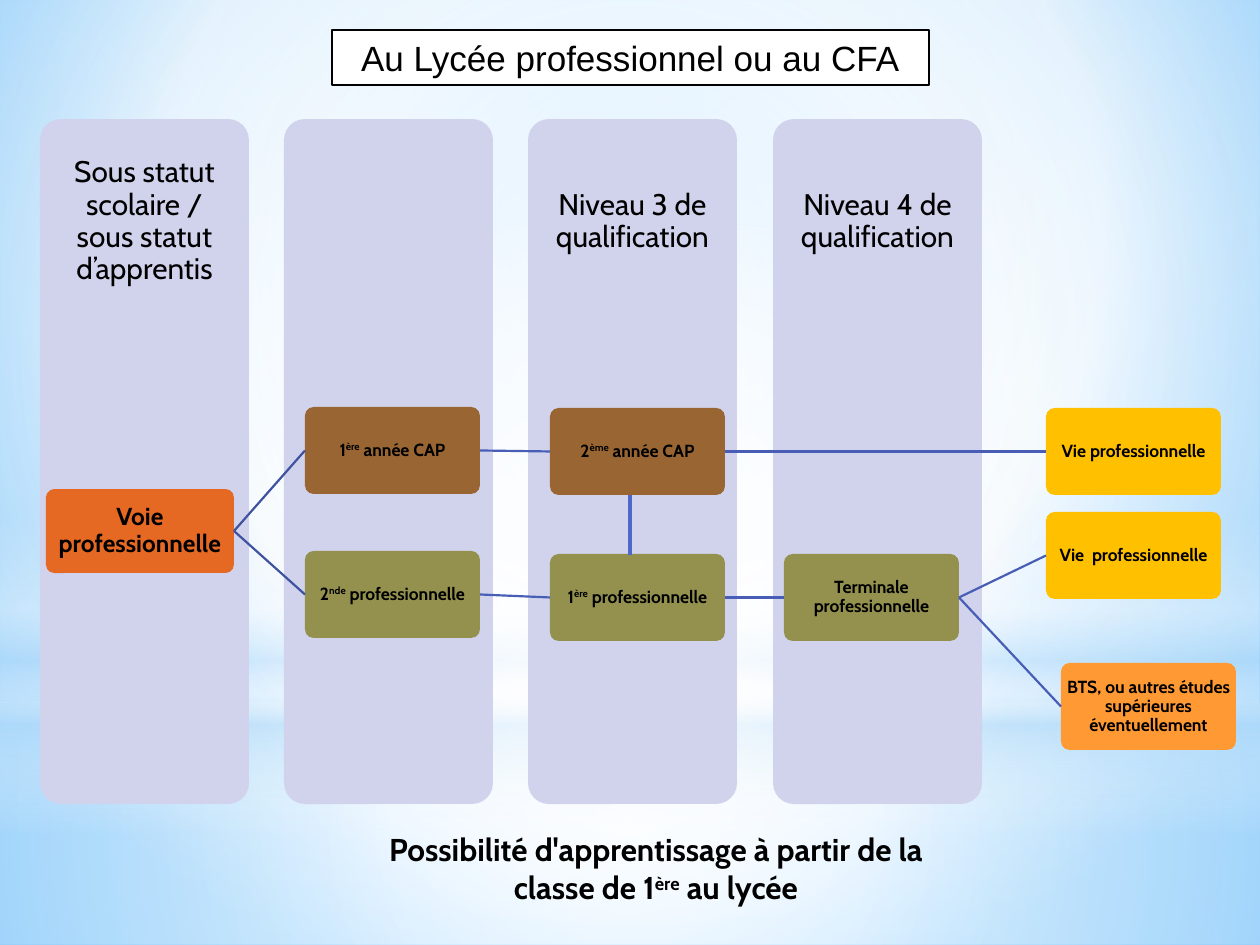
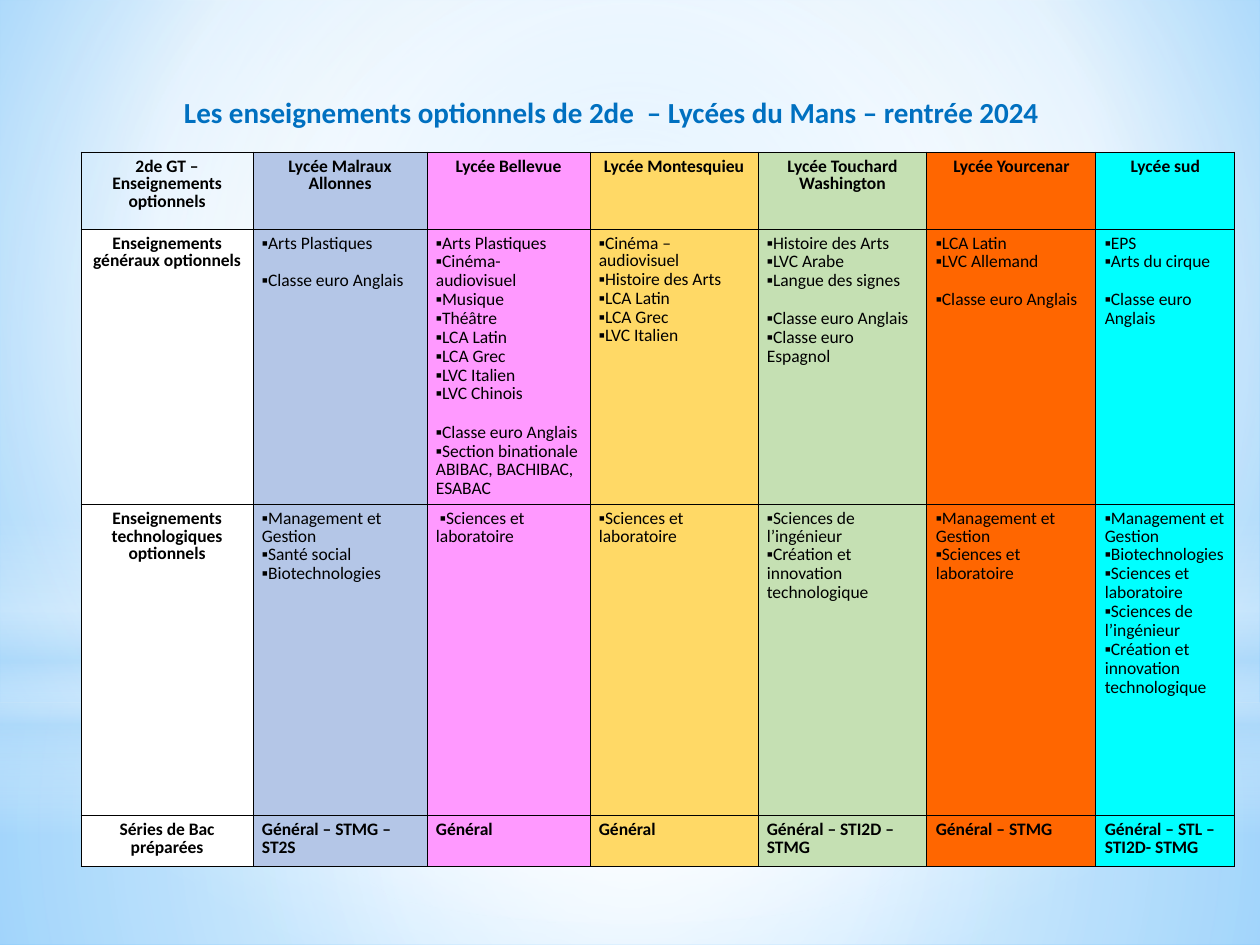
import dataclasses

import lxml.etree
import pptx
import pptx.dml.color
import pptx.enum.shapes
import pptx.enum.text
import pptx.oxml
import pptx.oxml.ns
import pptx.util

PX = 914400 / 126
RGB = pptx.dml.color.RGBColor.from_string
SHAPE = pptx.enum.shapes.MSO_SHAPE
ALIGN = pptx.enum.text.PP_ALIGN
ANCHOR = pptx.enum.text.MSO_ANCHOR
qn = pptx.oxml.ns.qn


@dataclasses.dataclass(frozen=True)
class Theme:
    black: str = "000000"
    white: str = "FFFFFF"
    sky: str = "B4DCFA"
    sky_core: str = "9ED5FF"
    sky_edge: str = "5BB9FF"
    band: str = "D0D3EB"
    start: str = "E56823"
    cap: str = "996633"
    pro: str = "93914D"
    work: str = "FFC000"
    studies: str = "FF9933"
    link_start: str = "3E52A0"
    link: str = "475DB6"
    bridge: str = "4E67C8"
    heading: str = "0070C0"
    schools: tuple = ("B4C6E7", "FF99FF", "FFD966", "C5E0B3", "FF6600", "00FFFF")
    body_font: str = "Cabin"
    title_font: str = "Arial"
    table_font: str = "Calibri"
    title_size: float = 20
    heading_size: float = 16.6
    note_size: float = 18
    band_size: float = 17
    start_size: float = 14
    small_size: float = 10


T = Theme()


def write(tf, text, size=T.small_size, font=T.body_font, color=T.black, bold=False,
          align=ALIGN.CENTER, anchor=None, spacing=(1, 1), margins=None, gap=0):
    tf.word_wrap = True
    if anchor is not None:
        tf.auto_size = pptx.enum.text.MSO_AUTO_SIZE.NONE
        tf.vertical_anchor = anchor
    if margins:
        x, y = (int(m * PX) for m in margins)
        tf.margin_left = tf.margin_right = x
        tf.margin_top = tf.margin_bottom = y
    p, before = tf.paragraphs[0], 0
    for i, line in enumerate(text.split("\n")):
        if not line:
            before = gap
            continue
        if i:
            p = tf.add_paragraph()
        p.alignment = align
        p.line_spacing = spacing[min(i, 1)]
        p.space_before = pptx.util.Pt(before)
        before = 0
        for n, part in enumerate(line.split("^")):
            r = p.add_run()
            r.text = part
            r.font.size = pptx.util.Pt(size)
            r.font.name = font
            r.font.bold = bold
            r.font.color.rgb = RGB(color)
            if n % 2:
                r._r.get_or_add_rPr().set("baseline", "30000")


def gradient(props, stops, focus=None):
    solid = props.find(qn("a:solidFill"))
    grad = pptx.oxml.parse_xml(
        '<a:gradFill xmlns:a="http://schemas.openxmlformats.org/drawingml/2006/main"'
        ' rotWithShape="1"><a:gsLst/></a:gradFill>')
    for pos, color, alpha in stops:
        gs = lxml.etree.SubElement(grad[0], qn("a:gs"), pos=str(pos * 1000))
        clr = lxml.etree.SubElement(gs, qn("a:srgbClr"), val=color)
        lxml.etree.SubElement(clr, qn("a:alpha"), val=str(alpha * 1000))
    if focus:
        kind = lxml.etree.SubElement(grad, qn("a:path"), {"path": "circle"})
        sides = {k: str(v * 1000) for k, v in zip("ltrb", focus)}
        lxml.etree.SubElement(kind, qn("a:fillToRect"), sides)
    else:
        lxml.etree.SubElement(grad, qn("a:lin"), ang="5400000", scaled="0")
    props.replace(solid, grad)


prs = pptx.Presentation()
prs.slide_width = pptx.util.Inches(10)
prs.slide_height = pptx.util.Inches(7.5)
layout = prs.slide_layouts[5]
master = prs.slide_master

s = prs.slides.add_slide(layout)
master.background.fill.solid()
gradient(next(master.element.iter(qn("p:bgPr"))),
         [(0, T.sky_core, 100), (60, T.white, 100), (100, T.sky_edge, 100)],
         (20, 10, 20, 60))

center = (50, 50, 50, 50)
glows = [
    (SHAPE.RECTANGLE, 703, 242, center,
     [(0, T.white, 91), (37, T.white, 76), (100, T.sky, 79)]),
    (SHAPE.RECTANGLE, 0, 703, center,
     [(0, T.white, 89), (48, T.white, 62), (100, T.sky, 79)]),
    (SHAPE.RECTANGLE, 519, 315, None,
     [(0, T.white, 0), (29, T.white, 30), (45, T.sky, 40),
      (55, T.white, 26), (65, T.sky, 60), (100, T.white, 0)]),
    (SHAPE.OVAL, 220, 703, center, [(0, T.white, 100), (56, T.white, 0)]),
]
for i, (kind, top, height, focus, stops) in enumerate(glows):
    sp = s.shapes.add_shape(kind, 0, int(top * PX), prs.slide_width, int(height * PX))
    sp.shadow.inherit = False
    sp.line.fill.background()
    sp.fill.solid()
    gradient(sp.element.spPr, stops, focus)
    master.element.cSld.spTree.insert(2 + i, sp.element)

title = s.shapes.title
title.left, title.top, title.width, title.height = (
    int(v * PX) for v in (332, 30, 597, 55))
title.fill.solid()
title.fill.fore_color.rgb = RGB(T.white)
title.line.color.rgb = RGB(T.black)
title.line.width = pptx.util.Pt(1.25)
write(title.text_frame, "Au Lycée professionnel ou au CFA", size=T.title_size,
      font=T.title_font, anchor=ANCHOR.MIDDLE)

bands = ["Sous statut scolaire / sous statut d’apprentis", "",
         "Niveau 3 de qualification", "Niveau 4 de qualification"]
for i, text in enumerate(bands):
    left, top, width = (int(v * PX) for v in (40 + i * 733 // 3, 119, 209))
    sp = s.shapes.add_shape(SHAPE.ROUNDED_RECTANGLE, left, top, width, int(685 * PX))
    sp.adjustments[0] = 0.1
    sp.shadow.inherit = False
    sp.fill.solid()
    sp.fill.fore_color.rgb = RGB(T.band)
    sp.line.fill.background()
    if text:
        tb = s.shapes.add_textbox(left, top, width, int(205 * PX))
        write(tb.text_frame, text, size=T.band_size, anchor=ANCHOR.MIDDLE,
              spacing=(0.9, 0.9), margins=(16, 16))

steps = {
    "voie": ("Voie professionnelle", 46, 489, T.start),
    "cap1": ("1^ère^ année CAP", 305, 407, T.cap),
    "cap2": ("2^ème^ année CAP", 550, 408, T.cap),
    "cap_work": ("Vie professionnelle", 1046, 408, T.work),
    "pro2": ("2^nde^ professionnelle", 305, 551, T.pro),
    "pro1": ("1^ère^ professionnelle", 550, 554, T.pro),
    "terminale": ("Terminale professionnelle", 784, 554, T.pro),
    "pro_work": ("Vie  professionnelle", 1046, 512, T.work),
    "bts": ("BTS, ou autres études supérieures éventuellement", 1061, 663, T.studies),
}
boxes = {}
for name, (text, left, top, color) in steps.items():
    width, height, size = (188, 84, T.start_size) if name == "voie" else (175, 87, T.small_size)
    sp = s.shapes.add_shape(SHAPE.ROUNDED_RECTANGLE,
                            *(int(v * PX) for v in (left, top, width, height)))
    sp.adjustments[0] = 0.1
    sp.shadow.inherit = False
    sp.fill.solid()
    sp.fill.fore_color.rgb = RGB(color)
    sp.line.fill.background()
    write(sp.text_frame, text, size=size, bold=True, anchor=ANCHOR.MIDDLE,
          spacing=(0.9, 0.9), margins=(3, 3))
    boxes[name] = sp

links = [("voie", "cap1"), ("voie", "pro2"), ("cap1", "cap2"), ("cap2", "cap_work"),
         ("pro2", "pro1"), ("pro1", "terminale"), ("terminale", "pro_work"),
         ("terminale", "bts"), None]
for link in links:
    line = s.shapes.add_connector(pptx.enum.shapes.MSO_CONNECTOR.STRAIGHT,
                                  *(int(v * PX) for v in (630, 495, 630, 555)))
    color, weight = T.bridge, 2.25
    if link:
        line.begin_connect(boxes[link[0]], 3)
        line.end_connect(boxes[link[1]], 1)
        color, weight = T.link_start if link[0] == "voie" else T.link, 1.25
    line.line.color.rgb = RGB(color)
    line.line.width = pptx.util.Pt(weight)
    lxml.etree.SubElement(line.element.spPr, qn("a:effectLst"))

tb = s.shapes.add_textbox(*(int(v * PX) for v in (373, 824, 566, 89)))
write(tb.text_frame,
      "Possibilité d'apprentissage à partir de la classe de 1^ère^ au lycée",
      size=T.note_size, bold=True, anchor=ANCHOR.TOP)

s = prs.slides.add_slide(layout)
title = s.shapes.title
title.left, title.top, title.width, title.height = (
    int(v * PX) for v in (173, 88, 1007, 48))
write(title.text_frame,
      "Les enseignements optionnels de 2de  – Lycées du Mans – rentrée 2024",
      size=T.heading_size, font=T.table_font, color=T.heading, bold=True,
      align=ALIGN.LEFT, anchor=ANCHOR.MIDDLE, margins=(11, 6))

rows = [
    ["2de GT – Enseignements optionnels", "Lycée Malraux Allonnes", "Lycée Bellevue",
     "Lycée Montesquieu", "Lycée Touchard Washington", "Lycée Yourcenar", "Lycée sud"],
    ["Enseignements généraux optionnels",
     "▪Arts Plastiques\n\n▪Classe euro Anglais",
     "▪Arts Plastiques\n▪Cinéma-audiovisuel\n▪Musique\n▪Théâtre\n▪LCA Latin\n"
     "▪LCA Grec\n▪LVC Italien\n▪LVC Chinois\n\n▪Classe euro Anglais\n"
     "▪Section binationale\nABIBAC, BACHIBAC, ESABAC",
     "▪Cinéma – audiovisuel\n▪Histoire des Arts\n▪LCA Latin\n▪LCA Grec\n▪LVC Italien",
     "▪Histoire des Arts\n▪LVC Arabe\n▪Langue des signes\n\n"
     "▪Classe euro Anglais\n▪Classe euro Espagnol",
     "▪LCA Latin\n▪LVC Allemand\n\n▪Classe euro Anglais",
     "▪EPS\n▪Arts du cirque\n\n▪Classe euro Anglais"],
    ["Enseignements technologiques optionnels",
     "▪Management et Gestion\n▪Santé social\n▪Biotechnologies",
     " ▪Sciences et laboratoire",
     "▪Sciences et laboratoire",
     "▪Sciences de l’ingénieur\n▪Création et innovation technologique",
     "▪Management et Gestion\n▪Sciences et laboratoire",
     "▪Management et Gestion\n▪Biotechnologies\n▪Sciences et laboratoire\n"
     "▪Sciences de l’ingénieur\n▪Création et innovation technologique"],
    ["Séries de Bac préparées", "Général – STMG – ST2S", "Général", "Général",
     "Général – STI2D – STMG", "Général – STMG", "Général – STL – STI2D- STMG"],
]
widths = [172, 174, 163, 168, 169, 169, 139]
heights = [77, 256, 311, 51]
table = s.shapes.add_table(
    len(heights), len(widths),
    *(int(v * PX) for v in (81, 152, sum(widths), sum(heights)))).table
table.first_row = table.horz_banding = False
for i, width in enumerate(widths):
    table.columns[i].width = int(width * PX)
for i, height in enumerate(heights):
    table.rows[i].height = int(height * PX)
for i, row in enumerate(rows):
    for j, text in enumerate(row):
        cell = table.cell(i, j)
        cell.margin_left = cell.margin_right = int(9 * PX)
        cell.margin_top = cell.margin_bottom = int(6 * PX)
        tcPr = cell._tc.get_or_add_tcPr()
        for side in "LRTB":
            ln = lxml.etree.SubElement(tcPr, qn("a:ln" + side), w="5715")
            fill = lxml.etree.SubElement(ln, qn("a:solidFill"))
            lxml.etree.SubElement(fill, qn("a:srgbClr"), val=T.black)
        if i == j == 0:
            cell.fill.background()
        else:
            cell.fill.solid()
            cell.fill.fore_color.rgb = RGB(T.schools[j - 1] if j else T.white)
        label = i == 0 or j == 0
        write(cell.text_frame, text, font=T.table_font, bold=label or i == 3,
              align=ALIGN.CENTER if label else ALIGN.LEFT,
              spacing=(0.83, 0.89), gap=11)

prs.save("out.pptx")
